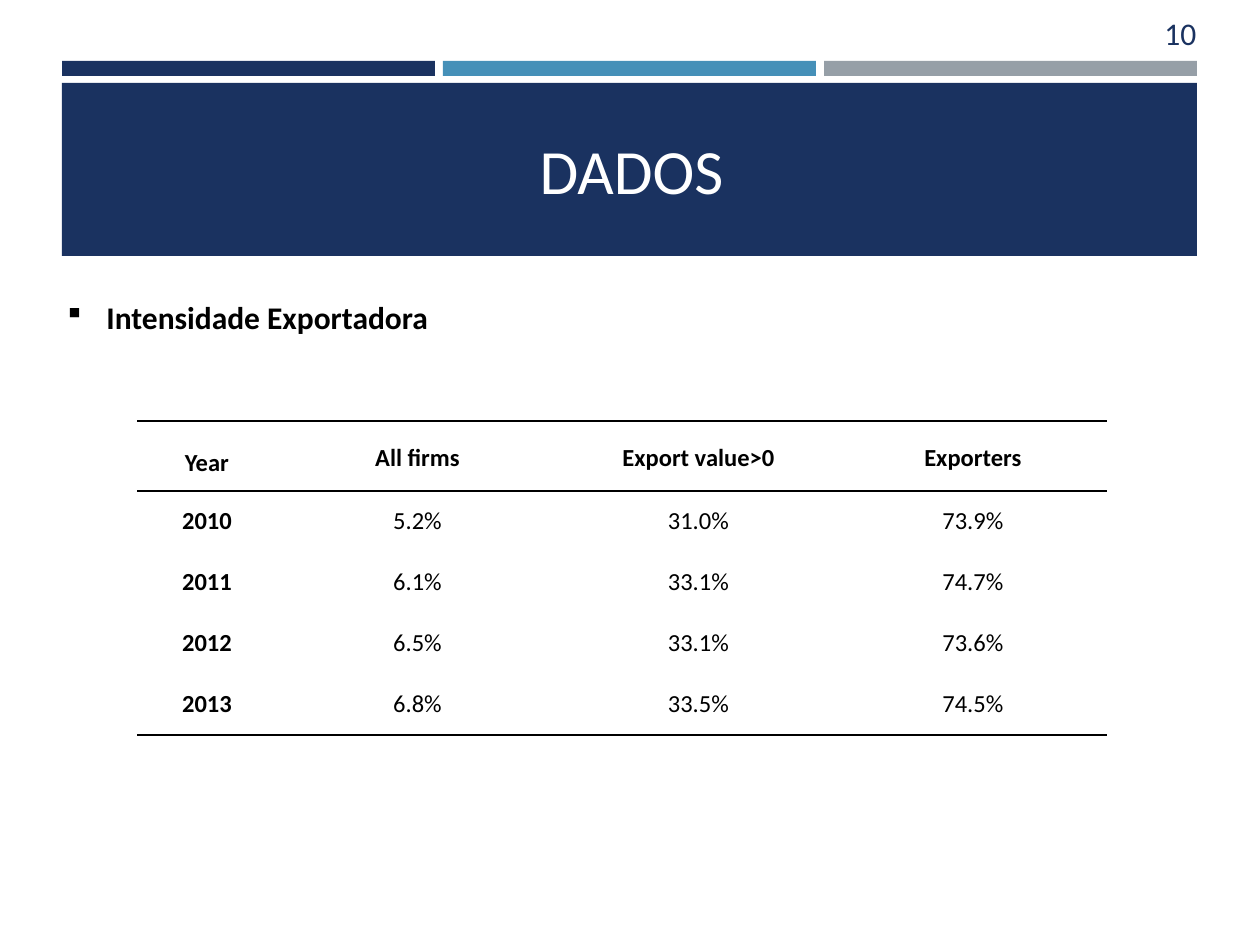
import pptx
import pptx.util
import pptx.dml.color
import pptx.enum.shapes
import pptx.enum.text
import pptx.oxml
import pptx.oxml.ns

NAVY = pptx.dml.color.RGBColor(0x1A, 0x32, 0x60)
BLUE = pptx.dml.color.RGBColor(0x45, 0x90, 0xB8)
GREY = pptx.dml.color.RGBColor(0x96, 0x9F, 0xA7)
BLACK = pptx.dml.color.RGBColor(0, 0, 0)
WHITE = pptx.dml.color.RGBColor(255, 255, 255)
ALIGN = pptx.enum.text.PP_ALIGN
ANCHOR = pptx.enum.text.MSO_ANCHOR


def px(n):
    return pptx.util.Emu(round(n * 914400 / 126))


class Deck:
    """Holds the text style and the current slide, and draws elements in px."""

    font = "Calibri"

    def __init__(self, width, height):
        self.prs = pptx.Presentation()
        self.prs.slide_width, self.prs.slide_height = px(width), px(height)
        self.s = self.prs.slides.add_slide(self.prs.slide_layouts[6])

    def style(self, p, size, color, bold=False, align=ALIGN.LEFT):
        p.alignment = align
        for r in p.runs:
            r.font.name, r.font.size, r.font.bold = self.font, pptx.util.Pt(size), bold
            r.font.color.rgb = color

    def rect(self, x, y, w, h, color):
        sp = self.s.shapes.add_shape(
            pptx.enum.shapes.MSO_SHAPE.RECTANGLE, px(x), px(y), px(w), px(h))
        sp.shadow.inherit = False
        sp.fill.solid()
        sp.fill.fore_color.rgb = color
        sp.line.fill.background()

    def text(self, x, y, w, h, text, size, color, anchor=ANCHOR.TOP, **style):
        tf = self.s.shapes.add_textbox(px(x), px(y), px(w), px(h)).text_frame
        tf.word_wrap = True
        tf.vertical_anchor = anchor
        tf.text = text
        self.style(tf.paragraphs[0], size, color, **style)
        return tf.paragraphs[0]

    def bullet(self, x, y, w, h, text, size, color, indent, **style):
        p = self.text(x, y, w, h, text, size, color, **style)
        pPr = p._p.get_or_add_pPr()
        pPr.set("marL", str(px(indent)))
        pPr.set("indent", str(-px(indent)))
        ns = pptx.oxml.ns.nsdecls("a")
        pPr.append(pptx.oxml.parse_xml(f'<a:buFont {ns} typeface="Wingdings"/>'))
        pPr.append(pptx.oxml.parse_xml(f'<a:buChar {ns} char="§"/>'))

    def borders(self, cell, ruled):
        tcPr = cell._tc.get_or_add_tcPr()
        for side in "LRTB":
            fill = (f'<a:solidFill><a:srgbClr val="{BLACK}"/></a:solidFill>'
                    if side in ruled else "<a:noFill/>")
            tcPr.append(pptx.oxml.parse_xml(
                f'<a:ln{side} {pptx.oxml.ns.nsdecls("a")} w="{pptx.util.Pt(1.5)}">'
                f'{fill}</a:ln{side}>'))

    def table(self, x, y, cols, heights, rows, size):
        table = self.s.shapes.add_table(
            len(rows), len(cols), px(x), px(y), px(sum(cols)), px(sum(heights))).table
        table.first_row = table.horz_banding = False
        for column, w in zip(table.columns, cols):
            column.width = px(w)
        ruled = {0: "TB", 1: "T", len(rows) - 1: "B"}
        for i, row in enumerate(rows):
            table.rows[i].height = px(heights[i])
            for j, value in enumerate(row):
                cell = table.cell(i, j)
                self.borders(cell, ruled.get(i, ""))
                cell.fill.background()
                cell.margin_left = cell.margin_right = px(9)
                cell.margin_top = cell.margin_bottom = 0
                cell.vertical_anchor = ANCHOR.TOP if i else ANCHOR.MIDDLE
                p = cell.text_frame.paragraphs[0]
                p.text = value
                p.line_spacing = 1.15 if i == 0 and j else 1.5
                self.style(p, size, BLACK, i == 0 or j == 0, ALIGN.CENTER)


def main():
    deck = Deck(1260, 945)
    for i, color in enumerate((NAVY, BLUE, GREY)):
        deck.rect(62 + 381 * i, 61, 373, 15, color)
    deck.rect(62, 83, 1135, 173, NAVY)
    deck.text(81, 95, 1101, 149, "DADOS", 36, WHITE, ANCHOR.MIDDLE, align=ALIGN.CENTER)
    deck.text(1152, 8, 65, 50, "10", 18, NAVY)
    deck.table(137, 421, [140, 281, 281, 268], [70] + [61] * 4, [
        ("Year", "All firms", "Export value>0", "Exporters"),
        ("2010", "5.2%", "31.0%", "73.9%"),
        ("2011", "6.1%", "33.1%", "74.7%"),
        ("2012", "6.5%", "33.1%", "73.6%"),
        ("2013", "6.8%", "33.5%", "74.5%"),
    ], 14)
    deck.bullet(55, 292, 1142, 50, "Intensidade Exportadora", 18, BLACK, 39, bold=True)
    deck.prs.save("out.pptx")


if __name__ == "__main__":
    main()
